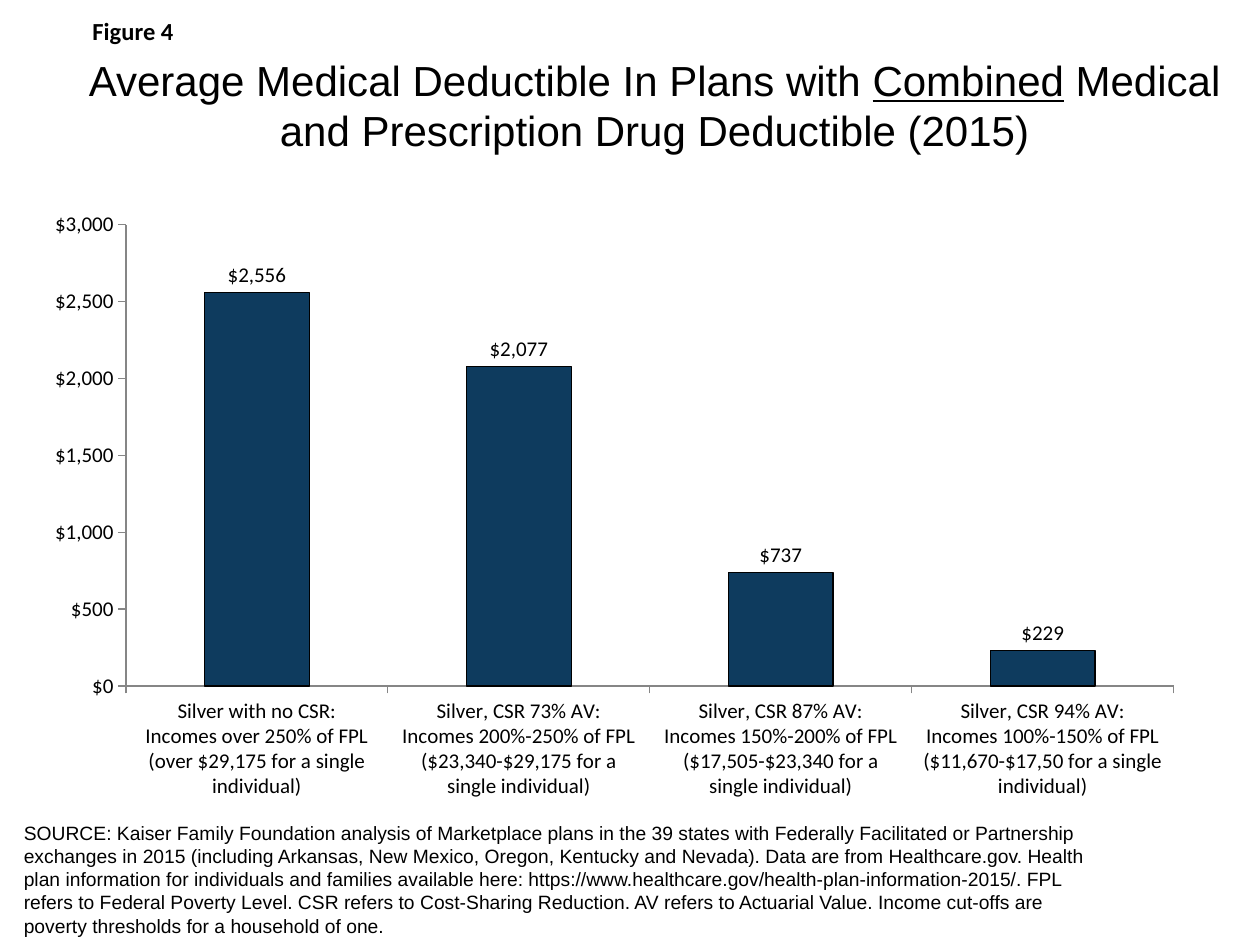
from lxml.etree import SubElement
from pptx import Presentation
from pptx.chart.data import CategoryChartData
from pptx.dml.color import RGBColor
from pptx.enum.chart import XL_CHART_TYPE, XL_LABEL_POSITION, XL_TICK_MARK
from pptx.enum.text import MSO_ANCHOR, PP_ALIGN
from pptx.oxml.ns import qn
from pptx.util import Inches, Pt

COLORS = {"text": "000000", "bar": "0E3B5E", "axis": "868686"}
DOLLARS = '"$"#,##0'

FIGURE_LABEL = "Figure 4"
TITLE = [
    ("Average Medical Deductible In Plans with ", False),
    ("Combined", True),
    (" Medical and Prescription Drug Deductible (2015)", False),
]
DEDUCTIBLES = [
    ("Silver with no CSR:\nIncomes over 250% of FPL\n"
     "(over $29,175 for a single individual)", 2556),
    ("Silver, CSR 73% AV:\nIncomes 200%-250% of FPL\n"
     "($23,340-$29,175 for a single individual)", 2077),
    ("Silver, CSR 87% AV:\nIncomes 150%-200% of FPL\n"
     "($17,505-$23,340 for a single individual)", 737),
    ("Silver, CSR 94% AV:\nIncomes 100%-150% of FPL\n"
     "($11,670-$17,50 for a single individual)", 229),
]
SOURCE = (
    "SOURCE: Kaiser Family Foundation analysis of Marketplace plans in the 39 "
    "states with Federally Facilitated or Partnership exchanges in 2015 (including "
    "Arkansas, New Mexico, Oregon, Kentucky and Nevada). Data are from "
    "Healthcare.gov. Health plan information for individuals and families available "
    "here: https://www.healthcare.gov/health-plan-information-2015/. FPL refers to "
    "Federal Poverty Level. CSR refers to Cost-Sharing Reduction. AV refers to "
    "Actuarial Value. Income cut-offs are poverty thresholds for a household of one."
)


def color(name):
    return RGBColor.from_string(COLORS[name])


def format_font(font, size, name="Calibri", bold=False):
    font.size, font.name, font.bold = Pt(size), name, bold
    font.color.rgb = color("text")


def add_text(slide, box, runs, size, font="Arial", bold=False,
             align=PP_ALIGN.LEFT, anchor=MSO_ANCHOR.TOP):
    """Add a one-paragraph text box; runs are (text, underlined) pairs."""
    frame = slide.shapes.add_textbox(*map(Inches, box)).text_frame
    frame.word_wrap = True
    frame.vertical_anchor = anchor
    paragraph = frame.paragraphs[0]
    paragraph.alignment = align
    for text, underlined in runs:
        run = paragraph.add_run()
        run.text = text
        format_font(run.font, size, font, bold)
        run.font.underline = underlined


def set_plot_area(chart, **fractions):
    """Fix the inner plot area as fractions of the chart's size."""
    plot_area = chart.plots[0]._element.getparent()
    layout = plot_area.find(qn("c:layout"))
    if layout is None:
        layout = SubElement(plot_area, qn("c:layout"))
        plot_area.insert(0, layout)
    manual = SubElement(layout, qn("c:manualLayout"))
    settings = {"layoutTarget": "inner", "xMode": "edge", "yMode": "edge", **fractions}
    for tag, value in settings.items():
        SubElement(manual, qn(f"c:{tag}")).set("val", str(value))


def add_deductible_chart(slide, box):
    data = CategoryChartData(number_format=DOLLARS)
    categories, values = zip(*DEDUCTIBLES)
    data.categories = categories
    data.add_series("Series 1", values)
    chart = slide.shapes.add_chart(
        XL_CHART_TYPE.COLUMN_CLUSTERED, *map(Inches, box), data).chart
    chart.has_legend = chart.has_title = False
    format_font(chart.font, 16)
    set_plot_area(chart, x=0.08, y=0.04, w=0.9, h=0.76)

    for axis in (chart.category_axis, chart.value_axis):
        axis.has_major_gridlines = False
        axis.major_tick_mark = XL_TICK_MARK.OUTSIDE
        axis.minor_tick_mark = XL_TICK_MARK.NONE
        axis.format.line.color.rgb = color("axis")
        axis.format.line.width = Pt(0.75)
        format_font(axis.tick_labels.font, 12)
    amounts = chart.value_axis
    amounts.minimum_scale, amounts.maximum_scale, amounts.major_unit = 0, 3000, 500
    amounts.tick_labels.number_format = DOLLARS
    amounts.tick_labels.number_format_is_linked = False

    plot = chart.plots[0]
    plot.gap_width = 150
    plot.vary_by_categories = False
    bars = plot.series[0]
    bars.format.fill.solid()
    bars.format.fill.fore_color.rgb = color("bar")
    bars.format.line.color.rgb = color("text")
    bars.format.line.width = Pt(0.75)
    labels = bars.data_labels
    labels.show_value = True
    labels.position = XL_LABEL_POSITION.OUTSIDE_END
    labels.number_format = DOLLARS
    labels.number_format_is_linked = False
    format_font(labels.font, 12)


def main():
    deck = Presentation()
    deck.slide_width, deck.slide_height = Inches(10), Inches(7.5)
    slide = deck.slides.add_slide(deck.slide_layouts[6])
    add_text(slide, (0.09, 6.47, 8.75, 1.03), [(SOURCE, False)], 11)
    add_deductible_chart(slide, (0.26, 1.59, 9.24, 4.82))
    add_text(slide, (0.49, 0.33, 9.41, 1), TITLE, 24,
             align=PP_ALIGN.CENTER, anchor=MSO_ANCHOR.MIDDLE)
    add_text(slide, (0.18, 0.08, 1.75, 0.34), [(FIGURE_LABEL, False)], 14,
             font="Calibri", bold=True, align=PP_ALIGN.CENTER)
    deck.save("out.pptx")


if __name__ == "__main__":
    main()
